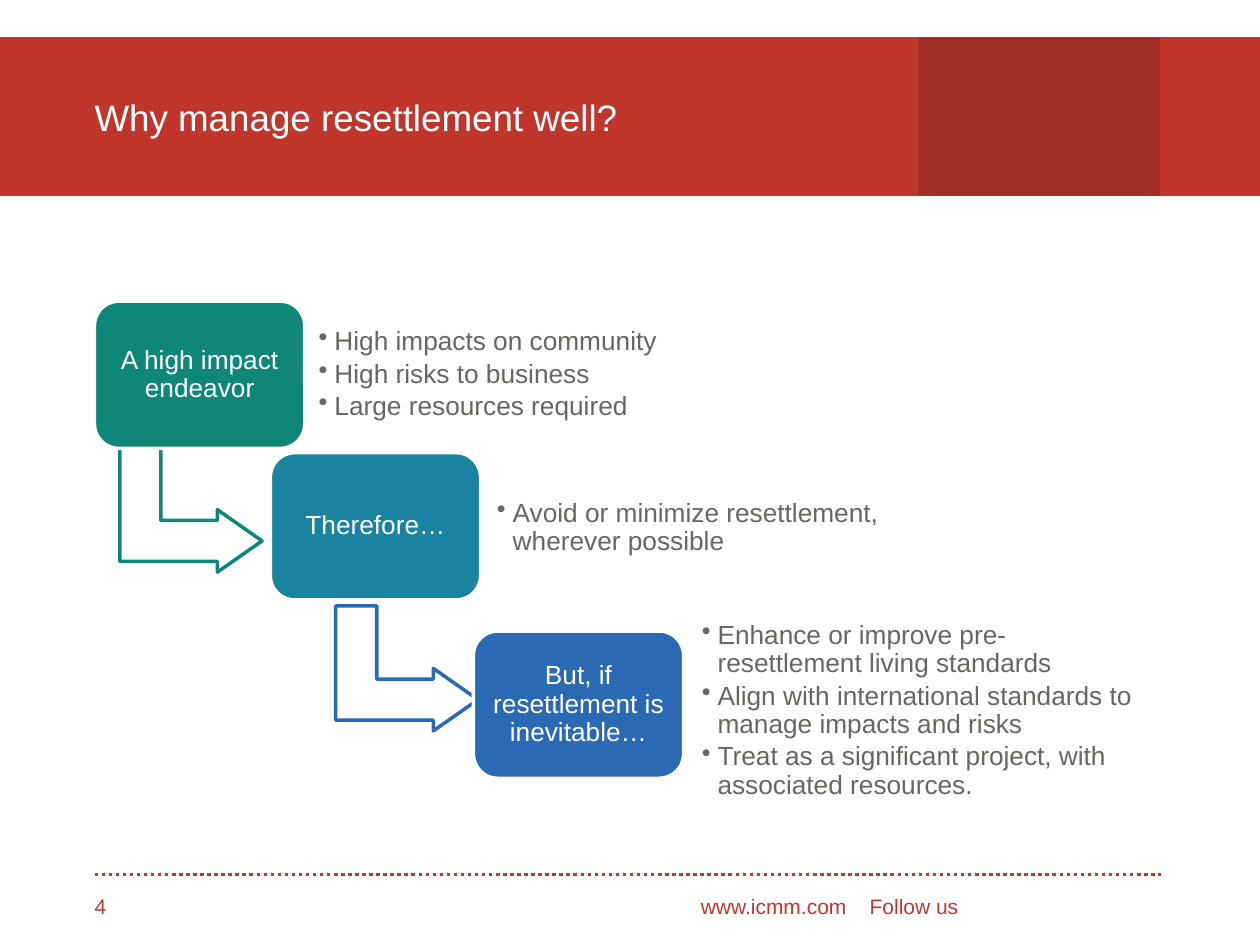
from lxml.etree import SubElement as Sub
from pptx import Presentation
from pptx.dml.color import RGBColor
from pptx.enum.dml import MSO_LINE
from pptx.enum.shapes import MSO_CONNECTOR as Conn, MSO_SHAPE as Kind
from pptx.enum.text import MSO_ANCHOR as Anchor, MSO_AUTO_SIZE as Fit, PP_ALIGN as Align
from pptx.oxml.ns import qn
from pptx.util import Pt

RED, DARK, WHITE, GREY = "C0362C", "A32E26", "FFFFFF", "666760"
GREEN, TEAL, BLUE = "0E8779", "1A839F", "2A6AB4"
BOX_W, BOX_H = 120.2, 84.2

# Box label, colour, left, top; bullet left, top, width; bullets
STEPS = [
    ("A high impact endeavor", GREEN, 54, 172.1, (177.8, 180, 324.7),
     ["High impacts on community", "High risks to business",
      "Large resources required"]),
    ("Therefore…", TEAL, 154.5, 258.7, (279.7, 267.8, 228.2),
     ["Avoid or minimize resettlement, wherever possible"]),
    ("But, if resettlement is inevitable…", BLUE, 270.5, 360.6,
     (396.7, 372.2, 265),
     ["Enhance or improve pre-resettlement living standards",
      "Align with international standards to manage impacts and risks",
      "Treat as a significant project, with associated resources."]),
]
ARROWS = [(GREEN, 73.4, 250.6), (BLUE, 196.8, 341.3)]


def tint(part, hue):
    """Colour a fill, line or font."""
    if hasattr(part, "solid"):
        part.solid()
        part = part.fore_color
    else:
        part = part.color
    part.rgb = RGBColor.from_string(hue)


def write(shape, *lines, size=15, hue=WHITE, align=Align.LEFT, pad=(0, 0, 0, 0),
          anchor=Anchor.TOP, space=1, after=0, bullet=False, tab=None):
    frame = shape.text_frame
    frame.word_wrap = True
    frame.auto_size = Fit.NONE
    frame.vertical_anchor = anchor
    (frame.margin_left, frame.margin_top,
     frame.margin_right, frame.margin_bottom) = map(Pt, pad)
    for i, line in enumerate(lines):
        para = frame.add_paragraph() if i else frame.paragraphs[0]
        para.text = line
        para.alignment = align
        para.line_spacing = space
        para.space_before = Pt(0)
        para.space_after = Pt(after)
        props = para._p.get_or_add_pPr()
        if bullet:
            props.set("marL", str(Pt(9)))
            props.set("indent", str(Pt(-9)))
            Sub(props, qn("a:buChar"), char="•")
        if tab:
            stops = Sub(props, qn("a:tabLst"))
            Sub(stops, qn("a:tab"), pos=str(Pt(tab)), algn="l")
        para.font.name = "Arial"
        para.font.size = Pt(size)
        tint(para.font, hue)


def block(slide, kind, place, fill, edge, width=0.75):
    shape = slide.shapes.add_shape(kind, *map(Pt, place))
    shape.shadow.inherit = False
    tint(shape.fill, fill)
    tint(shape.line, edge)
    shape.line.width = Pt(width)
    return shape


def label(slide, place, *lines, **form):
    write(slide.shapes.add_textbox(*map(Pt, place)), *lines, **form)


def banner(slide):
    block(slide, Kind.RECTANGLE, (525, 21.6, 138.5, 90), DARK, "A53325")
    block(slide, Kind.RECTANGLE, (663.5, 21.6, 56.5, 90), RED, RED)
    title = slide.shapes.title
    title.left, title.top, title.width, title.height = map(Pt, (0, 21.6, 525, 90))
    tint(title.fill, RED)
    tint(title.line, RED)
    title.line.width = Pt(0.75)
    write(title, "Why manage resettlement well?", size=21,
          pad=(54, 3.6, 7.2, 3.6), anchor=Anchor.MIDDLE)


def arrow(slide, hue, left, top):
    shape = block(slide, Kind.BENT_UP_ARROW, (left, top, 71.4, 81.3),
                  WHITE, hue, 2)
    shape.rotation = 90
    for i, value in enumerate((0.328, 0.25, 0.358)):
        shape.adjustments[i] = value


def step(slide, name, hue, left, top, spot, points):
    box = block(slide, Kind.ROUNDED_RECTANGLE, (left, top, BOX_W, BOX_H),
                hue, WHITE, 2)
    write(box, name, align=Align.CENTER, pad=(4.3,) * 4,
          anchor=Anchor.MIDDLE, space=0.9)
    label(slide, (*spot, 68), *points, hue=GREY, pad=(4.3,) * 4,
          anchor=Anchor.MIDDLE, space=0.9, after=2.25, bullet=True)


def footer(slide):
    rule = slide.shapes.add_connector(Conn.STRAIGHT, *map(Pt, (54, 499.7, 663.5, 499.7)))
    tint(rule.line.fill, RED)
    rule.line.width = Pt(2)
    rule.line.dash_style = MSO_LINE.ROUND_DOT
    Sub(rule._element.spPr, qn("a:effectLst"))
    label(slide, (54, 510.5, 168, 21.6), "4", size=12, hue=RED)
    label(slide, (400.5, 510.5, 160, 28.8), "www.icmm.com\tFollow us",
          size=12, hue=RED, tab=96.5)


def main():
    deck = Presentation()
    deck.slide_width, deck.slide_height = Pt(720), Pt(540)
    slide = deck.slides.add_slide(deck.slide_layouts[5])
    banner(slide)
    # Arrows lie behind the boxes
    for item in ARROWS:
        arrow(slide, *item)
    for item in STEPS:
        step(slide, *item)
    footer(slide)
    deck.save("out.pptx")


if __name__ == "__main__":
    main()
